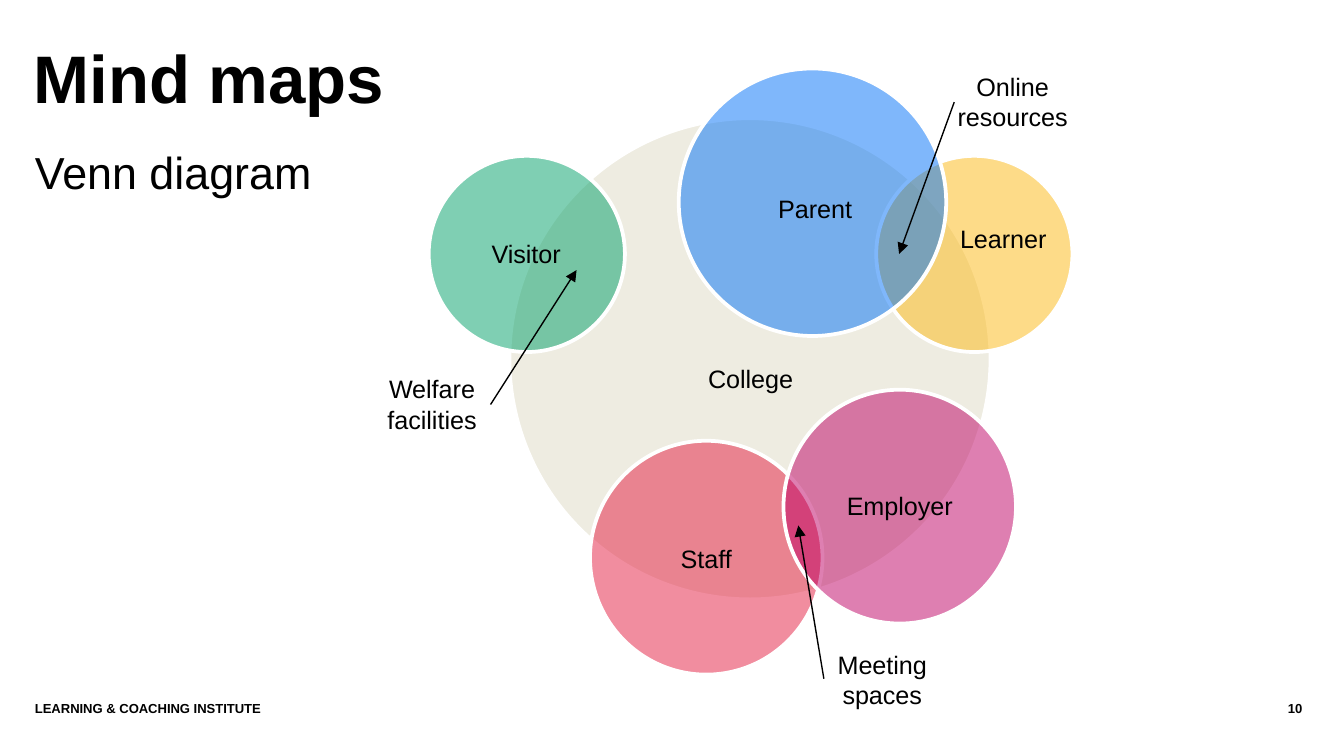
import pptx
import pptx.util
import pptx.dml.color
import pptx.enum.shapes
import pptx.enum.text
import pptx.oxml
import pptx.oxml.ns
from dataclasses import dataclass
from pptx.util import Inches


@dataclass(frozen=True)
class Theme:
    font: str = "Arial"
    ink: str = "000000"
    outline: str = "FFFFFF"
    college: str = "EEECE1"
    staff: str = "E51C41"
    visitor: str = "00A068"
    learner: str = "FDB913"
    parent: str = "0071F8"
    employer: str = "BE0064"
    title: float = 36
    subtitle: float = 24
    label: float = 13.5
    footer: float = 7


theme = Theme()
rgb = pptx.dml.color.RGBColor.from_string
align = pptx.enum.text.PP_ALIGN


def add_text(text, *, at, size, bold=False, alignment=align.LEFT):
    box = page.shapes.add_textbox(*map(Inches, at))
    frame = box.text_frame
    frame.word_wrap = True
    frame.margin_left = frame.margin_top = 0
    frame.margin_right = frame.margin_bottom = 0
    para = frame.paragraphs[0]
    para.alignment = alignment
    span = para.add_run()
    span.text = text
    span.font.name = theme.font
    span.font.size = pptx.util.Pt(size)
    span.font.bold = bold
    span.font.color.rgb = rgb(theme.ink)


def add_xml(parent, tag, **attributes):
    element = pptx.oxml.parse_xml(f"<a:{tag} {pptx.oxml.ns.nsdecls('a')}/>")
    for name, value in attributes.items():
        element.set(name, value)
    parent.append(element)


deck = pptx.Presentation()
deck.slide_width = Inches(10)
deck.slide_height = deck.slide_width * 9 // 16
page = deck.slides.add_slide(deck.slide_layouts[6])

add_text("Mind maps", at=(0.25, 0.27, 9.23, 0.76), size=theme.title, bold=True)
add_text("10", at=(8.7, 5.21, 0.99, 0.3), size=theme.footer, bold=True, alignment=align.RIGHT)
add_text("Venn diagram", at=(0.26, 1.08, 8.39, 3.94), size=theme.subtitle)

circles = [
    (3.79, 0.88, 3.58, 3.58, theme.college, 100),
    (4.39, 3.28, 1.73, 1.74, theme.staff, 50),
    (3.19, 1.16, 1.46, 1.46, theme.visitor, 50),
    (6.52, 1.16, 1.46, 1.46, theme.learner, 50),
    (5.05, 0.51, 1.99, 1.99, theme.parent, 50),
    (5.83, 2.9, 1.73, 1.74, theme.employer, 50),
]
for *bounds, color, opacity in circles:
    circle = page.shapes.add_shape(
        pptx.enum.shapes.MSO_SHAPE.OVAL, *map(Inches, bounds)
    )
    circle.shadow.inherit = False
    circle.fill.solid()
    circle.fill.fore_color.rgb = rgb(color)
    circle.line.color.rgb = rgb(theme.outline)
    circle.line.width = pptx.util.Pt(2)
    if opacity < 100:
        fill_color = circle.fill._xPr.find(".//" + pptx.oxml.ns.qn("a:srgbClr"))
        add_xml(fill_color, "alpha", val=str(opacity * 1000))

labels = [
    ("College", 5.15, 2.7, 0.23),
    ("Parent", 5.63, 1.44, 0.23),
    ("Visitor", 3.48, 1.77, 0.23),
    ("Staff", 4.82, 4.04, 0.23),
    ("Learner", 7.03, 1.66, 0.23),
    ("Employer", 6.26, 3.65, 0.23),
    ("Online resources", 7.1, 0.53, 0.45),
    ("Meeting spaces", 6.13, 4.83, 0.45),
    ("Welfare facilities", 2.78, 2.78, 0.45),
]
for text, left, top, height in labels:
    add_text(
        text,
        at=(left, top, 0.87, height),
        size=theme.label,
        alignment=align.CENTER,
    )

arrows = [
    (3.65, 3.01, 4.29, 2.01),
    (7.1, 0.76, 6.69, 1.89),
    (6.13, 5.05, 5.94, 3.91),
]
for ends in arrows:
    arrow = page.shapes.add_connector(
        pptx.enum.shapes.MSO_CONNECTOR.STRAIGHT, *map(Inches, ends)
    )
    arrow.line.color.rgb = rgb(theme.ink)
    arrow.line.width = pptx.util.Pt(0.75)
    add_xml(arrow.line._get_or_add_ln(), "tailEnd", type="triangle")
    add_xml(arrow._element.spPr, "effectLst")

add_text(
    "LEARNING & COACHING INSTITUTE",
    at=(0.26, 5.21, 8.41, 0.3),
    size=theme.footer,
    bold=True,
)

deck.save("out.pptx")
